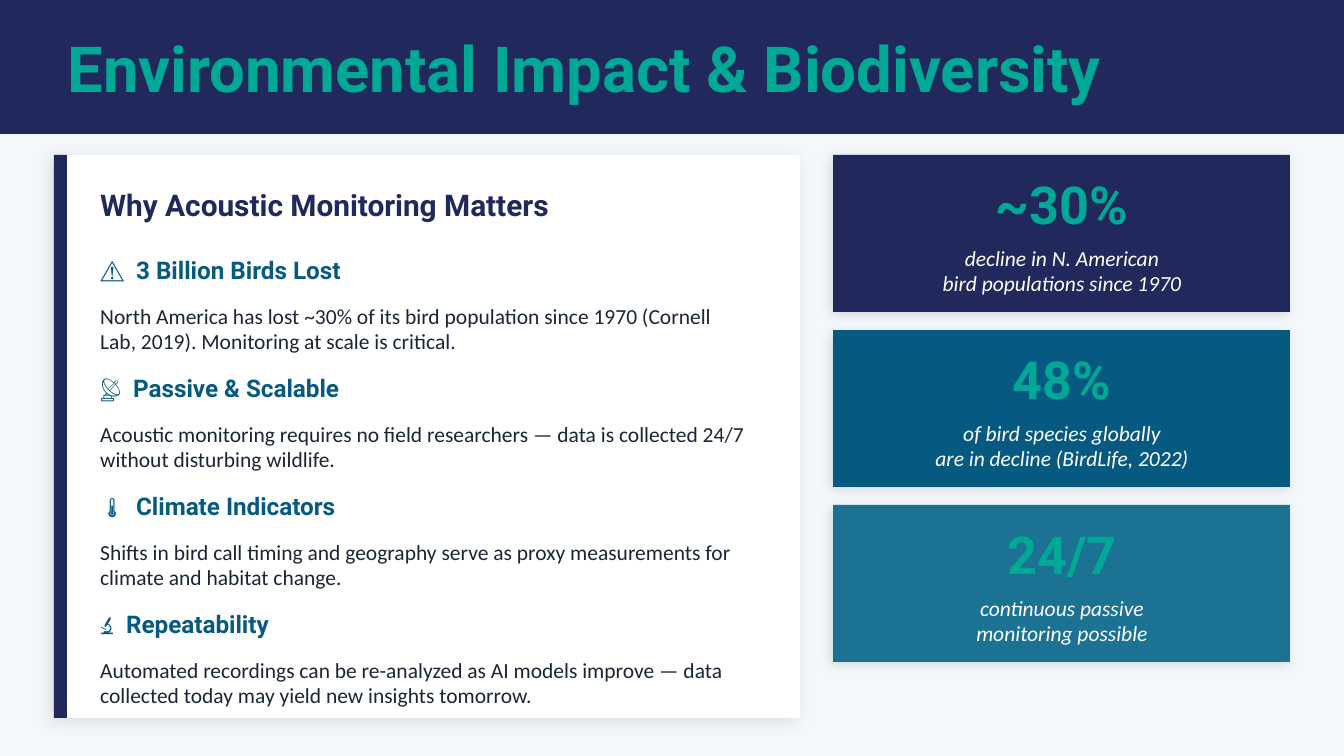
"""Build the slide on environmental impact and biodiversity."""
from lxml.etree import SubElement
from pptx import Presentation
from pptx.dml.color import RGBColor
from pptx.enum.shapes import MSO_SHAPE as SHAPE
from pptx.enum.text import MSO_ANCHOR as ANCHOR, MSO_AUTO_SIZE as AUTO, PP_ALIGN as ALIGN
from pptx.oxml.ns import qn
from pptx.util import Pt

NAVY, TEAL, BLUE, OCEAN = "21295C", "00A896", "065A82", "1C7293"
WHITE, INK, PALE = "FFFFFF", "1A2535", "F4F8FB"
HEAD, BODY = "Roboto", "Calibri"

REASONS = [
    ("⚠️", 36, "3 Billion Birds Lost",
     "North America has lost ~30% of its bird population since 1970 "
     "(Cornell Lab, 2019). Monitoring at scale is critical."),
    ("📡", 33, "Passive & Scalable",
     "Acoustic monitoring requires no field researchers — data is collected "
     "24/7 without disturbing wildlife."),
    ("🌡️", 36, "Climate Indicators",
     "Shifts in bird call timing and geography serve as proxy measurements "
     "for climate and habitat change."),
    ("🔬", 26, "Repeatability",
     "Automated recordings can be re-analyzed as AI models improve — data "
     "collected today may yield new insights tomorrow."),
]
STATS = [
    ("~30%", ["decline in N. American", "bird populations since 1970"], NAVY),
    ("48%", ["of bird species globally", "are in decline (BirdLife, 2022)"], BLUE),
    ("24/7", ["continuous passive", "monitoring possible"], OCEAN),
]


def px(n):
    return round(n * 914400 / 134.4)


def rgb(code):
    return RGBColor.from_string(code)


def add_shadow(sp, alpha, blur, dist):
    effects = sp._element.spPr.find(qn("a:effectLst"))
    outer = SubElement(effects, qn("a:outerShdw"), blurRad=str(Pt(blur)),
                       dist=str(Pt(dist)), dir=str(135 * 60000),
                       algn="bl", rotWithShape="0")
    color = SubElement(outer, qn("a:srgbClr"), val="000000")
    SubElement(color, qn("a:alpha"), val=str(alpha * 1000))


def add_rect(s, x, y, w, h, fill, shadow=None):
    sp = s.shapes.add_shape(SHAPE.RECTANGLE, px(x), px(y), px(w), px(h))
    sp.shadow.inherit = False
    sp.fill.solid()
    sp.fill.fore_color.rgb = rgb(fill)
    sp.line.fill.background()
    if shadow:
        add_shadow(sp, *shadow)


def fill_text(sp, lines, size, font, color, bold=False, italic=False,
              align=ALIGN.LEFT, anchor=ANCHOR.TOP, tab=None):
    tf = sp.text_frame
    tf.word_wrap = True
    tf.auto_size = AUTO.NONE
    tf.vertical_anchor = anchor
    for i, line in enumerate(lines):
        p = tf.add_paragraph() if i else tf.paragraphs[0]
        p.alignment = align
        if tab:
            tabs = SubElement(p._p.get_or_add_pPr(), qn("a:tabLst"))
            SubElement(tabs, qn("a:tab"), pos=str(px(tab)), algn="l")
        r = p.add_run()
        r.text = line
        r.font.size = Pt(size)
        r.font.name = font
        r.font.bold = bold
        r.font.italic = italic
        r.font.color.rgb = rgb(color)


def add_text(s, x, y, w, h, lines, *style, **options):
    sp = s.shapes.add_textbox(px(x), px(y), px(w), px(h))
    fill_text(sp, lines, *style, **options)


def add_header(s, text):
    add_rect(s, 0, 0, 1344, 134, NAVY)
    title = s.shapes.title
    s.shapes._spTree.append(title._element)
    title.left, title.top, title.width, title.height = px(54), px(0), px(1236), px(134)
    fill_text(title, [text], 34, HEAD, TEAL, bold=True, anchor=ANCHOR.MIDDLE)


def add_reason(s, y, icon, tab, heading, body):
    add_text(s, 87, y, 672, 47, [f"{icon}\t{heading}"], 13, HEAD, BLUE,
             bold=True, tab=tab)
    add_text(s, 87, y + 47, 672, 67, [body], 11.5, BODY, INK)


def add_stat(s, y, number, caption, fill):
    add_rect(s, 833, y, 457, 157, fill, shadow=(13, 6, 2))
    add_text(s, 847, y + 11, 430, 78, [number], 28, HEAD, TEAL,
             bold=True, align=ALIGN.CENTER)
    add_text(s, 847, y + 83, 430, 65, caption, 11.5, BODY, WHITE,
             italic=True, align=ALIGN.CENTER)


def main():
    prs = Presentation()
    prs.slide_width, prs.slide_height = px(1344), px(756)
    s = prs.slides.add_slide(prs.slide_layouts[5])
    s.background.fill.solid()
    s.background.fill.fore_color.rgb = rgb(PALE)
    add_header(s, "Environmental Impact & Biodiversity")
    add_rect(s, 54, 155, 746, 563, WHITE, shadow=(10, 8, 3))
    add_rect(s, 54, 155, 13, 563, NAVY)
    add_text(s, 87, 175, 685, 60, ["Why Acoustic Monitoring Matters"],
             16, HEAD, NAVY, bold=True, anchor=ANCHOR.MIDDLE)
    for i, reason in enumerate(REASONS):
        add_reason(s, 249 + 118 * i, *reason)
    for i, stat in enumerate(STATS):
        add_stat(s, 155 + 175 * i, *stat)
    prs.save("out.pptx")


if __name__ == "__main__":
    main()
